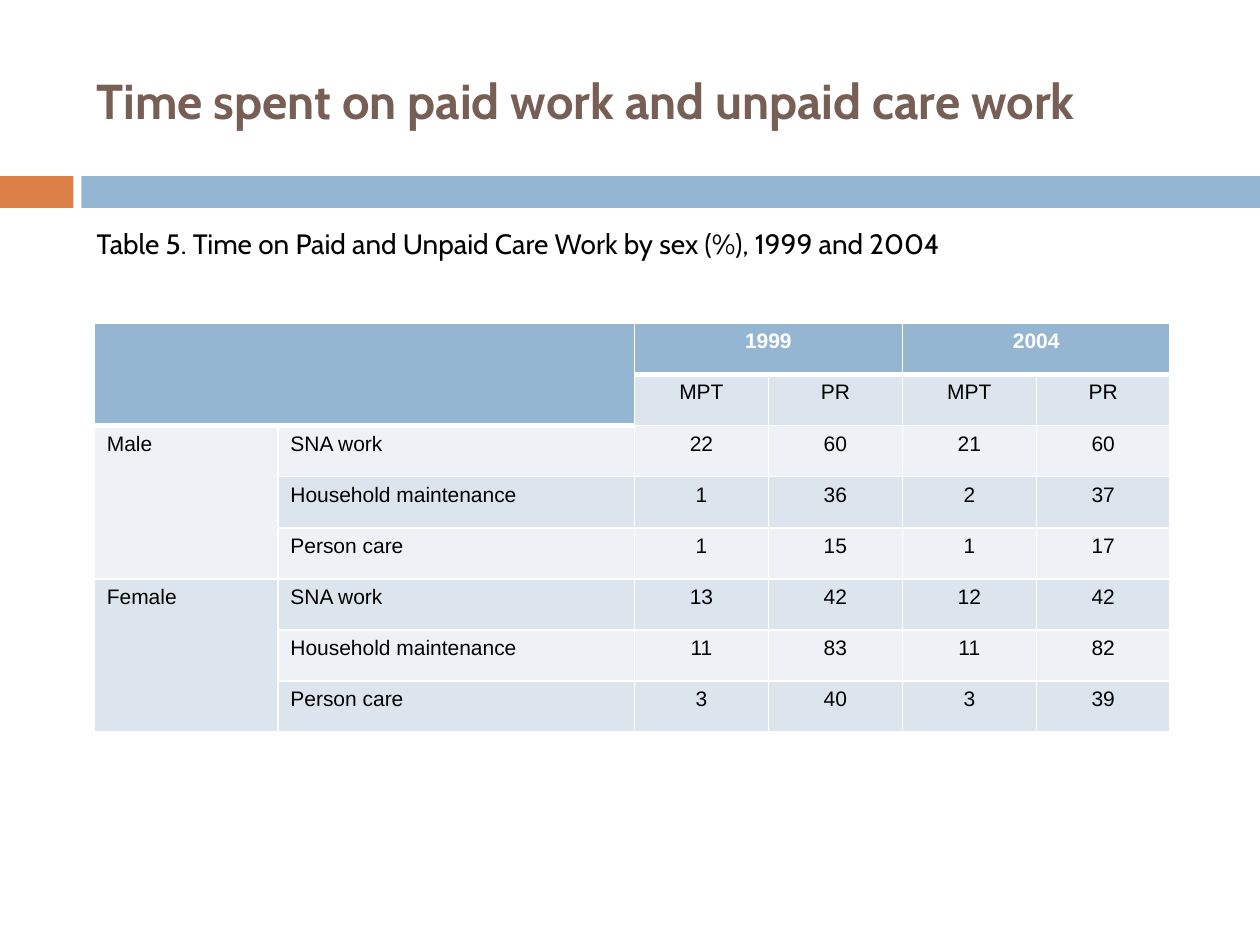
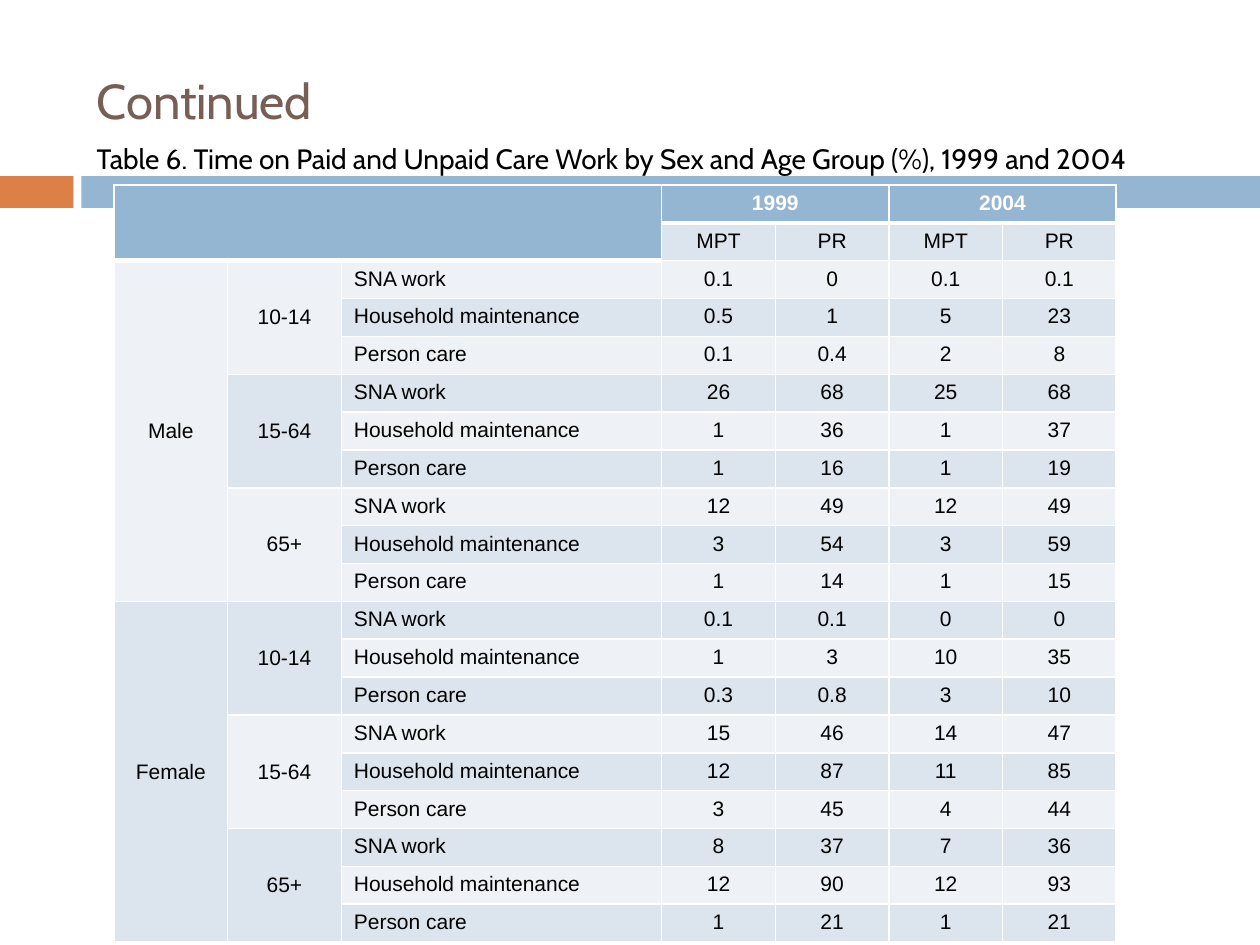
"""Build two slides of tables on time spent on paid and unpaid care work."""
from pptx import Presentation as Deck
from pptx.dml.color import RGBColor as RGB
from pptx.enum.shapes import MSO_SHAPE as Kind
from pptx.enum.text import MSO_ANCHOR as Anchor, PP_ALIGN as Align
from pptx.oxml.ns import qn
from pptx.util import Cm, Pt
from lxml.etree import SubElement as Sub

ORANGE = RGB(0xDD, 0x80, 0x47)
BLUE = RGB(0x94, 0xB6, 0xD2)
BROWN = RGB(0x77, 0x5F, 0x55)
DARK = RGB(0xDC, 0xE5, 0xEE)
PALE = RGB(0xEE, 0xF1, 0xF6)
BLACK = RGB(0, 0, 0)
WHITE = RGB(255, 255, 255)

YEARS = ["1999", "2004"]
RATES = ["MPT", "PR"]
SEXES = ["Male", "Female"]
AGES = ["10-14", "15-64", "65+"]
WORKS = ["SNA work", "Household maintenance", "Person care"]

BY_SEX = [
    "22 60 21 60", "1 36 2 37", "1 15 1 17",
    "13 42 12 42", "11 83 11 82", "3 40 3 39",
]
BY_AGE = [
    "0.1 0 0.1 0.1", "0.5 1 5 23", "0.1 0.4 2 8",
    "26 68 25 68", "1 36 1 37", "1 16 1 19",
    "12 49 12 49", "3 54 3 59", "1 14 1 15",
    "0.1 0.1 0 0", "1 3 10 35", "0.3 0.8 3 10",
    "15 46 14 47", "12 87 11 85", "3 45 4 44",
    "8 37 7 36", "12 90 12 93", "1 21 1 21",
]


def write(frame, text, size=12, font="Arial", color=BLACK, bold=False,
          align=Align.LEFT, before=0, hang=0):
    """Write one formatted paragraph into a text frame."""
    para = frame.paragraphs[0]
    para.alignment = align
    para.space_before = Pt(before)
    if hang:
        props = para._p.get_or_add_pPr()
        props.set("marL", str(Cm(hang)))
        props.set("indent", str(-Cm(hang)))
    run = para.add_run()
    run.text = text
    run.font.name, run.font.size = font, Pt(size)
    run.font.color.rgb, run.font.bold = color, bold


class Page:
    """Hold the deck's style and its current slide."""

    def __init__(self):
        """Open a deck of 4:3 slides."""
        self.deck = Deck()
        self.deck.slide_width, self.deck.slide_height = Cm(25.4), Cm(19.05)

    def start(self, title, bold=False):
        """Add a slide with its bands and title."""
        self.slide = self.deck.slides.add_slide(self.deck.slide_layouts[6])
        self.band(0, 1.48, ORANGE)
        self.band(1.64, 23.76, BLUE)
        self.text(title, 0.64, 2.75, Anchor.MIDDLE, size=28, color=BROWN,
                  bold=bold)

    def band(self, left, width, color):
        """Draw one piece of the band below the title."""
        shape = self.slide.shapes.add_shape(
            Kind.RECTANGLE, Cm(left), Cm(3.55), Cm(width), Cm(0.64))
        shape.shadow.inherit = False
        shape.fill.solid()
        shape.fill.fore_color.rgb = color
        shape.line.fill.background()

    def text(self, text, top, height, anchor=Anchor.TOP, **look):
        """Add a text box as wide as the content."""
        box = self.slide.shapes.add_textbox(
            Cm(1.7), Cm(top), Cm(22.65), Cm(height))
        box.text_frame.word_wrap = True
        box.text_frame.vertical_anchor = anchor
        write(box.text_frame, text, font="Cabin", **look)

    def caption(self, text, top):
        """Add the caption of a table."""
        self.text(text, top, 12.5, size=16, before=7, hang=0.89)

    def edge(self, cell, top, bottom):
        """Draw white borders round a cell."""
        props = cell._tc.get_or_add_tcPr()
        for side, width in zip("LRTB", (1, 1, top, bottom)):
            line = Sub(props, qn("a:ln" + side), w=str(Pt(width)))
            Sub(Sub(line, qn("a:solidFill")), qn("a:srgbClr"), val=str(WHITE))

    def table(self, left, top, widths, heights, tall, levels, data,
              middle=False):
        """Add a table with nested row labels and yearly rates."""
        deep, count = len(levels), len(data) + 2
        shape = self.slide.shapes.add_table(
            count, len(widths), Cm(left), Cm(top), Cm(sum(widths)), Cm(tall))
        grid = shape.table
        for col, width in zip(grid.columns, widths):
            col.width = Cm(width)
        for row, height in zip(grid.rows, heights):
            row.height = Cm(height)
        shape.height = Cm(tall)

        def is_head(row, col):
            return row == 0 or row == 1 and col < deep

        for row in range(count):
            for col in range(len(widths)):
                cell, head = grid.cell(row, col), is_head(row, col)
                under = row > 0 and not head and is_head(row - 1, col)
                self.edge(cell, 3 if under else 1, 3 if head else 1)
                cell.fill.solid()
                cell.fill.fore_color.rgb = (
                    BLUE if head else DARK if row % 2 else PALE)
                Sub(cell.text_frame.paragraphs[0]._p, qn("a:endParaRPr"),
                    sz="1200")

        def put(row, col, text, **look):
            write(grid.cell(row, col).text_frame, text, **look)

        grid.cell(0, 0).merge(grid.cell(1, deep - 1))
        for i, year in enumerate(YEARS):
            col = deep + 2 * i
            grid.cell(0, col).merge(grid.cell(0, col + 1))
            put(0, col, year, color=WHITE, bold=True, align=Align.CENTER)
        for col, names in enumerate(levels):
            step = len(data) // len(names)
            mid = middle and step > 1
            for i, name in enumerate(names):
                row = 2 + i * step
                if step > 1:
                    grid.cell(row, col).merge(grid.cell(row + step - 1, col))
                if mid:
                    grid.cell(row, col).vertical_anchor = Anchor.MIDDLE
                put(row, col, name, align=Align.CENTER if mid else Align.LEFT)
        rows = [RATES * len(YEARS)] + [line.split() for line in data]
        for row, values in enumerate(rows, 1):
            for col, value in enumerate(values, deep):
                put(row, col, value, align=Align.CENTER)


def main():
    """Build and save the slides."""
    page = Page()
    page.start("Time spent on paid work and unpaid care work", bold=True)
    page.caption("Table 5. Time on Paid and Unpaid Care Work by sex (%), "
                 "1999 and 2004", 4.45)
    page.table(1.9, 6.52, [3.7, 7.19] + [2.7] * 4, [1.03] * 8, 8.24,
               [SEXES, WORKS * 2], BY_SEX)

    page.start("Continued")
    page.caption("Table 6. Time on Paid and Unpaid Care Work by Sex and "
                 "Age Group (%), 1999 and 2004", 2.72)
    page.table(2.3, 3.73, [2.29, 2.29, 6.46] + [2.29] * 4,
               [0.66] + [0.61] * 19, 15.24,
               [SEXES, AGES * 2, WORKS * 6], BY_AGE, middle=True)
    page.deck.save("out.pptx")


if __name__ == "__main__":
    main()
